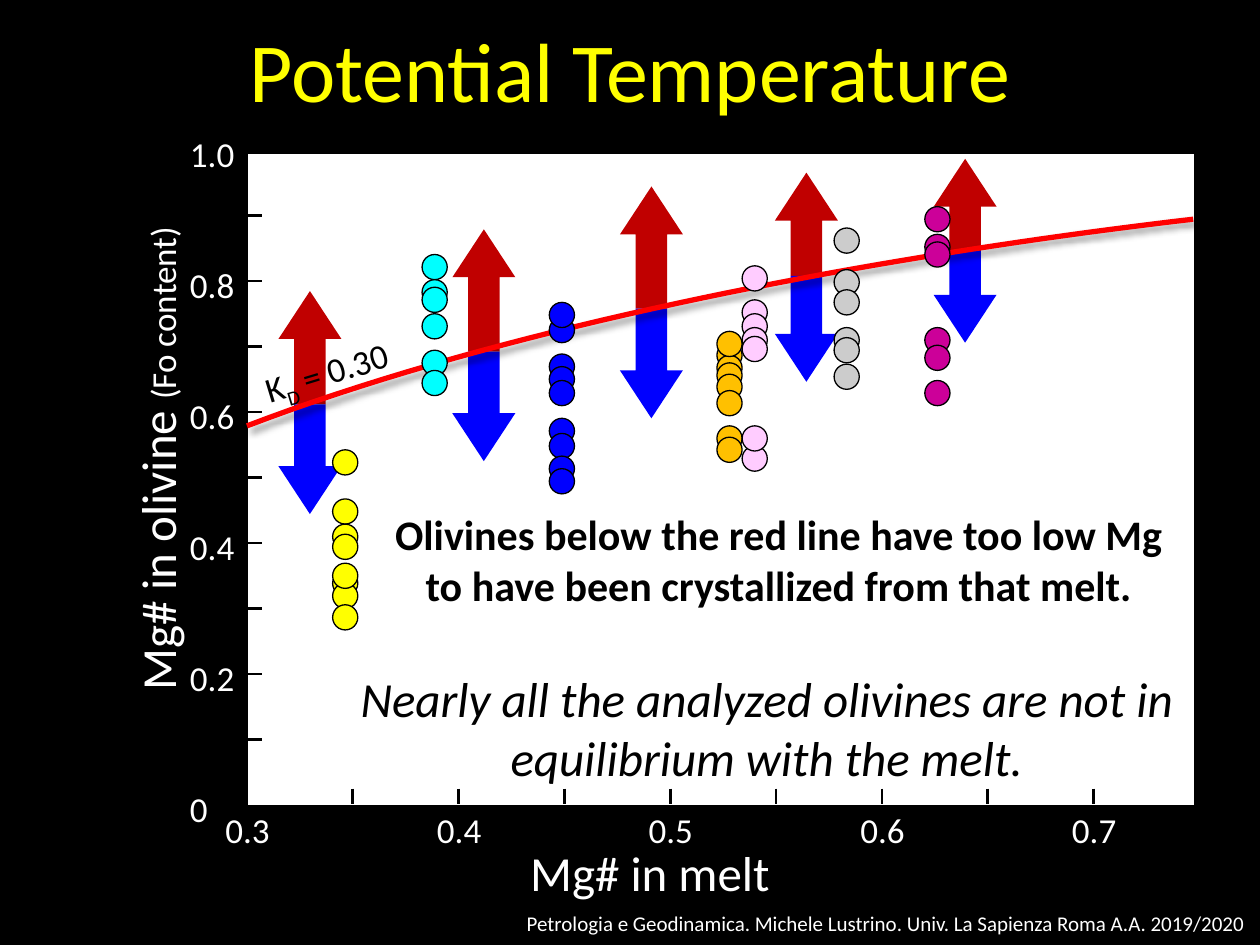
from dataclasses import dataclass

from lxml import etree
from pptx import Presentation
from pptx.dml.color import RGBColor
from pptx.enum.shapes import MSO_CONNECTOR as Connector, MSO_SHAPE as Shape
from pptx.enum.text import MSO_ANCHOR as Anchor, MSO_AUTO_SIZE as AutoSize, PP_ALIGN as Align
from pptx.oxml.ns import qn
from pptx.util import Inches, Pt


@dataclass(frozen=True)
class Theme:
    font: str = "Calibri"
    black: str = "000000"
    white: str = "FFFFFF"
    yellow: str = "FFFF00"
    red: str = "FF0000"
    dark_red: str = "C00000"
    blue: str = "0000FF"
    cyan: str = "00FFFF"
    orange: str = "FFC000"
    pink: str = "FFCCFF"
    grey: str = "CCCCCC"
    magenta: str = "CC0099"
    title: int = 48
    large: int = 28
    message: int = 24
    label: int = 20
    footer: int = 12


@dataclass(frozen=True)
class Box:
    left: float
    top: float
    width: float
    height: float

    def inner(self, left, top, width, height):
        """Box placed by its offset from this one."""
        return Box(self.left + left, self.top + top, width, height)

    def lengths(self):
        return [Inches(v) for v in (self.left, self.top, self.width, self.height)]


THEME = Theme()

# Offsets from the plot area: left, then the tops of the dots, back to front
OLIVINES = [
    (THEME.blue, 2.40, [1.31, 1.60, 1.70, 1.81, 2.11, 2.23, 2.41, 2.51, 1.19]),
    (THEME.orange, 3.73, [1.51, 1.61, 1.67, 1.42, 1.76, 1.89, 2.17, 2.26]),
    (THEME.cyan, 1.39, [0.81, 1.01, 1.07, 1.28, 1.57, 1.73]),
    (THEME.pink, 3.93, [0.90, 1.17, 1.28, 1.39, 1.46, 2.33, 2.17]),
    (THEME.grey, 4.66, [0.60, 0.93, 1.09, 1.39, 1.47, 1.68]),
    (THEME.magenta, 5.38, [0.43, 0.65, 0.71, 1.39, 1.53, 1.81]),
    (THEME.yellow, 0.68, [2.75, 2.95, 3.03, 3.32, 3.42, 3.26, 3.59, 2.36]),
]
# Offsets from the plot area: left, top, meeting point, bottom
ARROWS = [
    (1.63, 0.61, 1.58, 2.45),
    (0.25, 1.10, 2.00, 2.87),
    (2.96, 0.27, 1.24, 2.11),
    (4.19, 0.16, 0.98, 1.82),
    (5.45, 0.05, 0.78, 1.51),
]
CURVE = [(0, 2.17), (2.31, 1.29), (5.36, 0.78), (7.51, 0.53)]


def rgb(color):
    return RGBColor.from_string(color)


def write(shape, runs, color, align=Align.LEFT, wrap=True, anchor=Anchor.TOP, **font_format):
    """Fill a shape with one paragraph; runs are (text, size, baseline in percent)."""
    frame = shape.text_frame
    for name, value in {"word_wrap": wrap, "vertical_anchor": anchor,
                        "auto_size": AutoSize.SHAPE_TO_FIT_TEXT}.items():
        setattr(frame, name, value)
    paragraph = frame.paragraphs[0]
    paragraph.alignment = align
    for text, size, baseline in runs:
        run = paragraph.add_run()
        run.text = text
        for name, value in {"name": THEME.font, "size": Pt(size), **font_format}.items():
            setattr(run.font, name, value)
        run.font.color.rgb = rgb(color)
        if baseline:
            run.font._element.set("baseline", str(baseline * 1000))


def add_text(shapes, box, runs, color, rotation=0, **text_format):
    shape = shapes.add_textbox(*box.lengths())
    shape.rotation = rotation
    write(shape, runs, color, **text_format)


def add_filled(shapes, kind, box, fill, line_width=0):
    shape = shapes.add_shape(kind, *box.lengths())
    shape.shadow.inherit = False
    shape.fill.solid()
    shape.fill.fore_color.rgb = rgb(fill)
    if line_width:
        shape.line.color.rgb = rgb(THEME.black)
        shape.line.width = Pt(line_width)
    else:
        shape.line.fill.background()
    return shape


def add_tick(shapes, box):
    left, top, width, height = box.lengths()
    tick = shapes.add_connector(Connector.STRAIGHT, left, top, left + width, top + height)
    tick.line.color.rgb = rgb(THEME.black)
    tick.line.width = Pt(1.5)
    etree.SubElement(tick._element.spPr, qn("a:effectLst"))


def add_axes(slide, box):
    shapes = slide.shapes.add_group_shape().shapes
    add_filled(shapes, Shape.RECTANGLE, box, THEME.white, 1.5)
    # Axis titles
    add_text(shapes, box.inner(-2.68, 2.12, 3.93, 0.57),
             [("Mg# in olivine ", THEME.large, 0), ("(Fo content)", THEME.label, 0)],
             THEME.white, rotation=270, wrap=False)
    add_text(shapes, box.inner(2.15, 5.43, 2.12, 0.57),
             [("Mg# in melt", THEME.large, 0)], THEME.white, wrap=False)
    # Axis values
    for index, value in enumerate(["0.3", "0.4", "0.5", "0.6", "0.7"]):
        add_text(shapes, box.inner(-0.27 + 1.68 * index, 5.16, 0.56, 0.44),
                 [(value, THEME.label, 0)], THEME.white, wrap=False)
    for index, value in enumerate(["1.0", "0.8", "0.6", "0.4", "0.2", "0"]):
        add_text(shapes, box.inner(-0.55, -0.21 + 1.04 * index, 0.56, 0.44),
                 [(value, THEME.label, 0)], THEME.white, wrap=False)
    # Ticks
    for index in range(8):
        add_tick(shapes, box.inner(0.84 + 0.84 * index, 5.05, 0, 0.12))
    for index in range(9):
        add_tick(shapes, box.inner(0.01, 0.5 + 0.52 * index, 0.11, 0))


def add_arrows(slide, box):
    for left, top, middle, bottom in ARROWS:
        for start, end, color, rotation in [(top, middle, THEME.dark_red, 180),
                                            (middle, bottom, THEME.blue, 0)]:
            arrow = add_filled(slide.shapes, Shape.DOWN_ARROW,
                               box.inner(left, start, 0.5, end - start), color)
            arrow.rotation = rotation
            arrow.adjustments[0], arrow.adjustments[1] = 0.5, 0.76


def add_equilibrium_curve(slide, box, steps=40):
    def point(t):
        weights = ((1 - t) ** 3, 3 * t * (1 - t) ** 2, 3 * t ** 2 * (1 - t), t ** 3)
        x, y = (sum(w * p[axis] for w, p in zip(weights, CURVE)) for axis in (0, 1))
        return Inches(box.left + x), Inches(box.top + y)

    points = [point(step / steps) for step in range(steps + 1)]
    builder = slide.shapes.build_freeform(*points[0])
    builder.add_line_segments(points[1:], close=False)
    curve = builder.convert_to_shape()
    curve.fill.background()
    curve.line.color.rgb = rgb(THEME.red)
    curve.line.width = Pt(3)
    curve.shadow.inherit = False
    effects = curve._element.spPr.find(qn("a:effectLst"))
    shadow = etree.SubElement(effects, qn("a:outerShdw"), blurRad=str(Pt(4)),
                              dist=str(Pt(3)), dir="2700000", rotWithShape="0")
    color = etree.SubElement(shadow, qn("a:srgbClr"), val=THEME.black)
    etree.SubElement(color, qn("a:alpha"), val="40000")


def add_olivines(slide, box):
    shapes = slide.shapes.add_group_shape().shapes
    for color, left, tops in OLIVINES:
        for top in tops:
            add_filled(shapes, Shape.OVAL, box.inner(left, top, 0.2, 0.2), color, 0.75)


def add_title(slide, box):
    title = slide.shapes.title
    title.left, title.top, title.width, title.height = box.lengths()
    write(title, [("Potential Temperature", THEME.title, 0)], THEME.yellow, align=Align.CENTER)


def add_plot(slide, box):
    add_axes(slide, box)
    add_arrows(slide, box)
    # Reading of the curve
    message = add_filled(slide.shapes, Shape.RECTANGLE, box.inner(0.93, 2.78, 6.58, 0.91),
                         THEME.white)
    write(message, [("Olivines below the red line have too low Mg to have been "
                     "crystallized from that melt.", THEME.message, 0)],
          THEME.black, align=Align.CENTER, bold=True)
    add_text(slide.shapes, box.inner(0.03, 1.52, 1.23, 0.44),
             [("K", THEME.label, 0), ("D", THEME.label, -25), (" = 0.30", THEME.label, 0)],
             THEME.black, rotation=343.1, wrap=False)
    add_equilibrium_curve(slide, box)
    add_olivines(slide, box)
    # Conclusion
    add_text(slide.shapes, box.inner(0.76, 4.05, 6.73, 1.04),
             [("Nearly all the analyzed olivines are not in equilibrium with the melt.",
               THEME.large, 0)], THEME.black, align=Align.CENTER, italic=True)


def add_footer(slide, box):
    add_text(slide.shapes, box,
             [("Petrologia e Geodinamica. Michele Lustrino. Univ. La Sapienza Roma "
               "A.A. 2019/2020", THEME.footer, 0)],
             THEME.white, align=Align.RIGHT, anchor=Anchor.MIDDLE)


def main():
    presentation = Presentation()
    presentation.slide_width, presentation.slide_height = Inches(10), Inches(7.5)
    slide = presentation.slides.add_slide(presentation.slide_layouts[5])
    slide.background.fill.solid()
    slide.background.fill.fore_color.rgb = rgb(THEME.black)
    add_footer(slide, Box(3.97, 7.18, 6.01, 0.3))
    add_title(slide, Box(0, 0.1, 10, 0.9))
    add_plot(slide, Box(1.96, 1.21, 7.53, 5.19))
    presentation.save("out.pptx")


if __name__ == "__main__":
    main()
